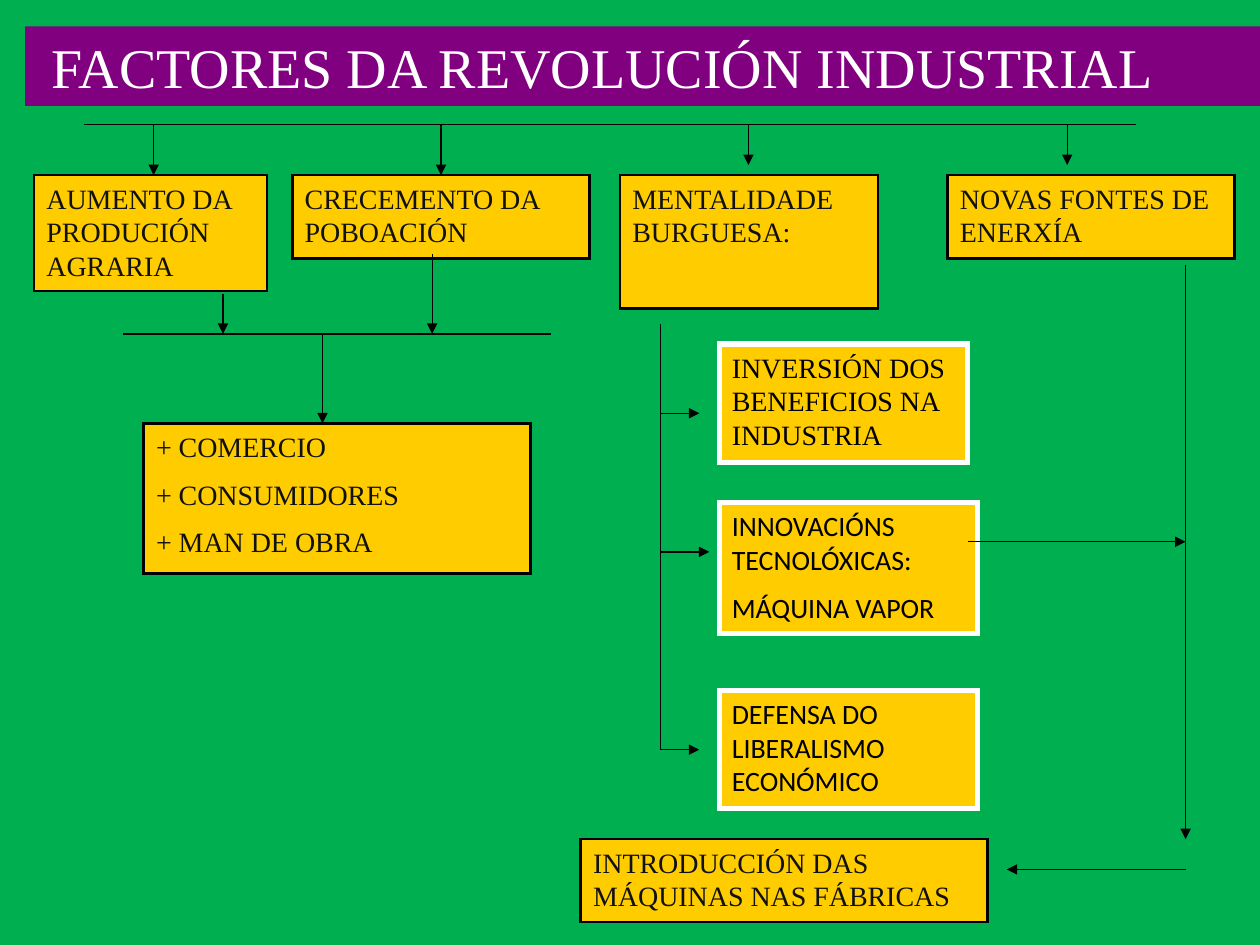
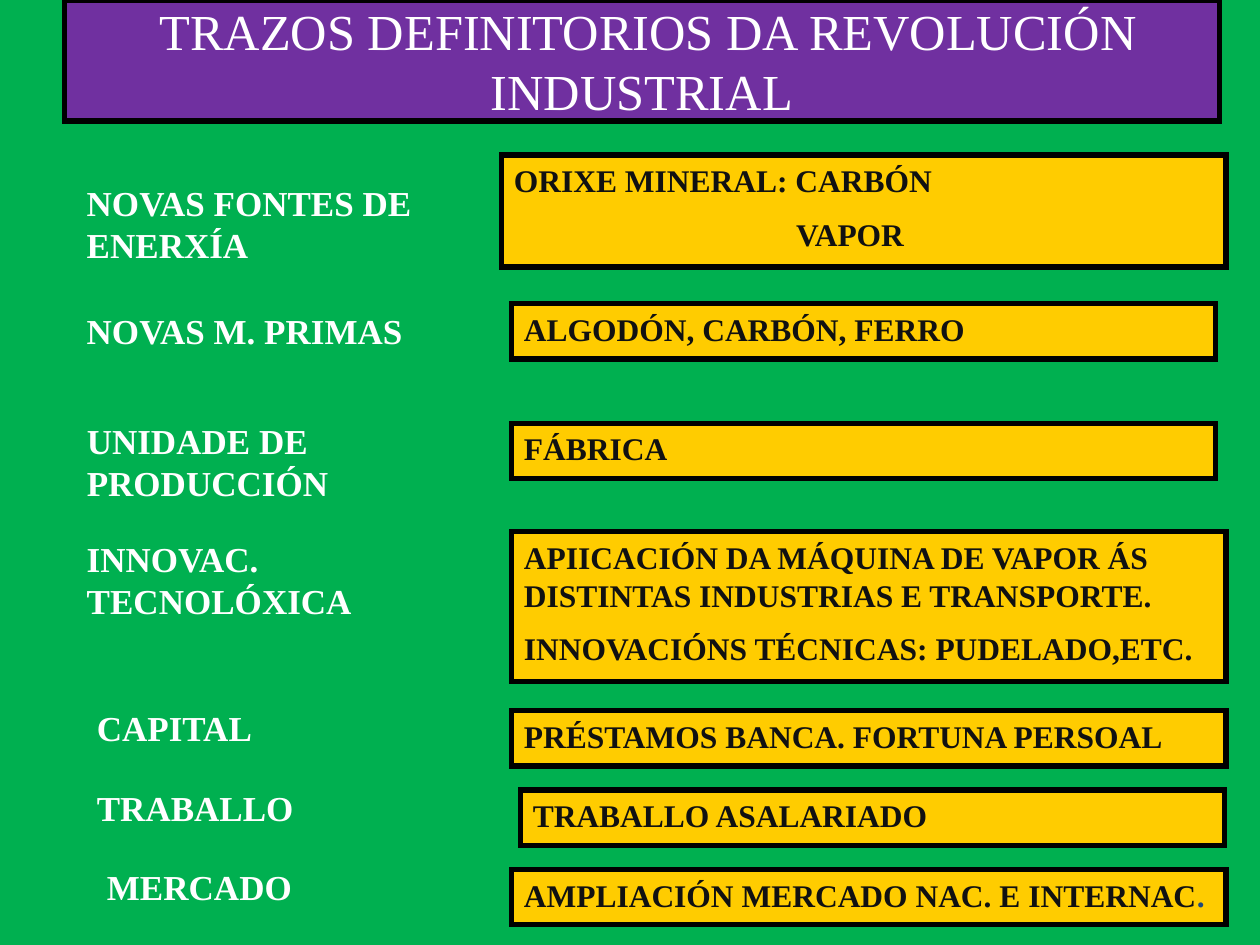
from lxml import etree
from pptx import Presentation
from pptx.dml.color import RGBColor
from pptx.enum import shapes, text
from pptx.oxml import ns
from pptx.util import Inches, Pt

GREEN = RGBColor(0x00, 0xB0, 0x50)
GOLD = RGBColor(0xFF, 0xCC, 0x00)
MAGENTA = RGBColor(0x80, 0x00, 0x80)
PURPLE = RGBColor(0x70, 0x30, 0xA0)
NAVY = RGBColor(0x1F, 0x49, 0x7D)
INK = RGBColor(0x11, 0x11, 0x11)
BLACK = RGBColor(0x00, 0x00, 0x00)
WHITE = RGBColor(0xFF, 0xFF, 0xFF)
SERIF, SANS = "Times New Roman", "Calibri"

FACTORS_TITLE = "FACTORES DA REVOLUCIÓN INDUSTRIAL"
TRAITS_TITLE = "TRAZOS DEFINITORIOS DA REVOLUCIÓN INDUSTRIAL"

# Place (left, top, width, height) and paragraphs
FACTORS = [
    ((0.27, 1.39, 1.85, 0.92), ["AUMENTO DA PRODUCIÓN AGRARIA"]),
    ((2.32, 1.39, 2.36, 0.66), ["CRECEMENTO DA POBOACIÓN"]),
    ((4.92, 1.39, 2.05, 1.06), ["MENTALIDADE BURGUESA:"]),
    ((7.52, 1.39, 2.28, 0.66), ["NOVAS FONTES DE ENERXÍA"]),
    ((1.14, 3.36, 3.07, 1.19), ["+ COMERCIO", "+ CONSUMIDORES", "+ MAN DE OBRA"]),
    ((4.61, 6.66, 3.23, 0.66), ["INTRODUCCIÓN DAS MÁQUINAS NAS FÁBRICAS"]),
]
MENTALITY = [
    ((5.71, 2.73, 1.97, 0.94), SERIF, ["INVERSIÓN DOS BENEFICIOS NA INDUSTRIA"]),
    ((5.71, 3.99, 2.05, 1.04), SANS, ["INNOVACIÓNS TECNOLÓXICAS:", "MÁQUINA VAPOR"]),
    ((5.71, 5.48, 2.05, 0.94), SANS, ["DEFENSA DO LIBERALISMO ECONÓMICO"]),
]

# Bars and arrows run from (x, y) to (x, y)
TOP_Y, JOIN_Y, TRUNK_X, ENERGY_X = 0.99, 2.65, 5.24, 9.41
BARS = [
    (0.67, TOP_Y, 9.02, TOP_Y),
    (0.98, JOIN_Y, 4.37, JOIN_Y),
    (TRUNK_X, 2.57, TRUNK_X, 5.95),
]
DROPS = [  # x, from y, to y
    (1.22, TOP_Y, 1.39), (3.5, TOP_Y, 1.39), (5.94, TOP_Y, 1.31), (8.47, TOP_Y, 1.31),
    (1.77, 2.33, JOIN_Y), (3.43, 2.02, JOIN_Y), (2.56, JOIN_Y, 3.36),
    (TRUNK_X, 5.25, 5.25), (ENERGY_X, 2.1, 6.66),
]
BRANCHES = [  # y, from x, to x
    (3.28, TRUNK_X, 5.55), (4.38, TRUNK_X, 5.63), (5.95, TRUNK_X, 5.55),
    (4.3, 7.68, ENERGY_X), (6.9, ENERGY_X, 7.99),
]

# Label, its place, place of its box, paragraphs of the box
TRAITS = [
    ("NOVAS FONTES DE ENERXÍA", (0.59, 1.39, 2.84, 0.77),
     (3.98, 1.23, 5.75, 0.89), ["ORIXE MINERAL: CARBÓN", "VAPOR"]),
    ("NOVAS M. PRIMAS", (0.59, 2.41, 2.83, 0.43),
     (4.06, 2.41, 5.59, 0.44), ["ALGODÓN, CARBÓN, FERRO"]),
    ("UNIDADE DE PRODUCCIÓN", (0.59, 3.28, 2.52, 0.77),
     (4.06, 3.36, 5.59, 0.44), ["FÁBRICA"]),
    ("INNOVAC. TECNOLÓXICA", (0.59, 4.22, 2.44, 0.77),
     (4.06, 4.22, 5.67, 1.19),
     ["APIICACIÓN DA MÁQUINA DE VAPOR ÁS DISTINTAS INDUSTRIAS E TRANSPORTE.",
      "INNOVACIÓNS TÉCNICAS: PUDELADO,ETC."]),
    ("CAPITAL", (0.67, 5.56, 2.2, 0.43),
     (4.06, 5.64, 5.67, 0.44), ["PRÉSTAMOS BANCA. FORTUNA PERSOAL"]),
    ("TRABALLO", (0.67, 6.19, 2.05, 0.43),
     (4.13, 6.27, 5.59, 0.44), ["TRABALLO ASALARIADO"]),
    ("MERCADO", (0.75, 6.82, 2.28, 0.43),
     (4.06, 6.9, 5.67, 0.44), ["AMPLIACIÓN MERCADO NAC. E INTERNAC"]),
]
VAPOR_INDENT = 2.24


def add_span(para, words, size, color, font=SERIF, bold=False):
    span = para.add_run()
    span.text = words
    span.font.size = Pt(size)
    span.font.name = font
    span.font.bold = bold
    span.font.color.rgb = color


def indent(para, inches):
    """Indent the first line only."""
    para._p.get_or_add_pPr().set("indent", str(Inches(inches)))


def write(shape, lines, size, color, font=SERIF, bold=False):
    """Fill a shape with paragraphs set half a line apart, from its top left."""
    frame = shape.text_frame
    frame.word_wrap = True
    frame.auto_size = text.MSO_AUTO_SIZE.NONE
    frame.vertical_anchor = text.MSO_ANCHOR.TOP
    for number, line in enumerate(lines):
        para = frame.add_paragraph() if number else frame.paragraphs[0]
        para.alignment = text.PP_ALIGN.LEFT
        para.space_before = Pt(size / 2 if number else 0)
        add_span(para, line, size, color, font, bold)
    return frame


def paint(shape, fill, line=None, width=0):
    shape.fill.solid()
    shape.fill.fore_color.rgb = fill
    if line is None:
        shape.line.fill.background()
        return
    shape.line.color.rgb = line
    shape.line.width = Pt(width)
    miter = etree.SubElement(shape.line._get_or_add_ln(), ns.qn("a:miter"))
    miter.set("lim", "800000")


def add_box(page, place, line, width):
    box = page.shapes.add_shape(shapes.MSO_SHAPE.RECTANGLE, *map(Inches, place))
    box.shadow.inherit = False
    paint(box, GOLD, line, width)
    return box


def add_line(page, x1, y1, x2, y2, arrow=False):
    line = page.shapes.add_connector(
        shapes.MSO_CONNECTOR.STRAIGHT, *map(Inches, (x1, y1, x2, y2)))
    line.line.color.rgb = BLACK
    line.line.width = Pt(0.75)
    if arrow:
        tail = etree.SubElement(line.line._get_or_add_ln(), ns.qn("a:tailEnd"))
        tail.set("type", "triangle")
    etree.SubElement(line._element.spPr, ns.qn("a:effectLst"))


def add_page(deck, title, place, size):
    """Add a green page; return it with its placed title shape and text frame."""
    page = deck.slides.add_slide(deck.slide_layouts[5])
    page.background.fill.solid()
    page.background.fill.fore_color.rgb = GREEN
    band = page.shapes.title
    band.left, band.top, band.width, band.height = map(Inches, place)
    return page, band, write(band, [title], size, WHITE)


def build_factors(deck):
    page, band, frame = add_page(deck, FACTORS_TITLE, (0.2, 0.21, 9.8, 0.63), 32)
    paint(band, MAGENTA)
    indent(frame.paragraphs[0], 0.11)
    for place, lines in FACTORS:
        write(add_box(page, place, BLACK, 1.5), lines, 16, INK)
    for place, font, lines in MENTALITY:
        write(add_box(page, place, WHITE, 3), lines, 16, BLACK, font)
    for bar in BARS:
        add_line(page, *bar)
    for x, start, end in DROPS:
        add_line(page, x, start, x, end, arrow=True)
    for y, start, end in BRANCHES:
        add_line(page, start, y, end, y, arrow=True)


def build_traits(deck):
    page, band, frame = add_page(deck, TRAITS_TITLE, (0.51, 0, 9.17, 0.96), 28.8)
    paint(band, PURPLE, BLACK, 3)
    frame.vertical_anchor = text.MSO_ANCHOR.MIDDLE
    frame.paragraphs[0].alignment = text.PP_ALIGN.CENTER
    indent(frame.paragraphs[0], 0.1)
    frames = {}
    for label, label_place, box_place, lines in TRAITS:
        caption = page.shapes.add_textbox(*map(Inches, label_place))
        write(caption, [label], 20, WHITE, bold=True)
        box = add_box(page, box_place, BLACK, 3)
        frames[label] = write(box, lines, 18, INK, bold=True)
    indent(frames["NOVAS FONTES DE ENERXÍA"].paragraphs[1], VAPOR_INDENT)
    add_span(frames["MERCADO"].paragraphs[0], ".", 18, NAVY, bold=True)


def main():
    deck = Presentation()
    deck.slide_width, deck.slide_height = Inches(10), Inches(7.5)
    build_factors(deck)
    build_traits(deck)
    deck.save("out.pptx")


if __name__ == "__main__":
    main()
